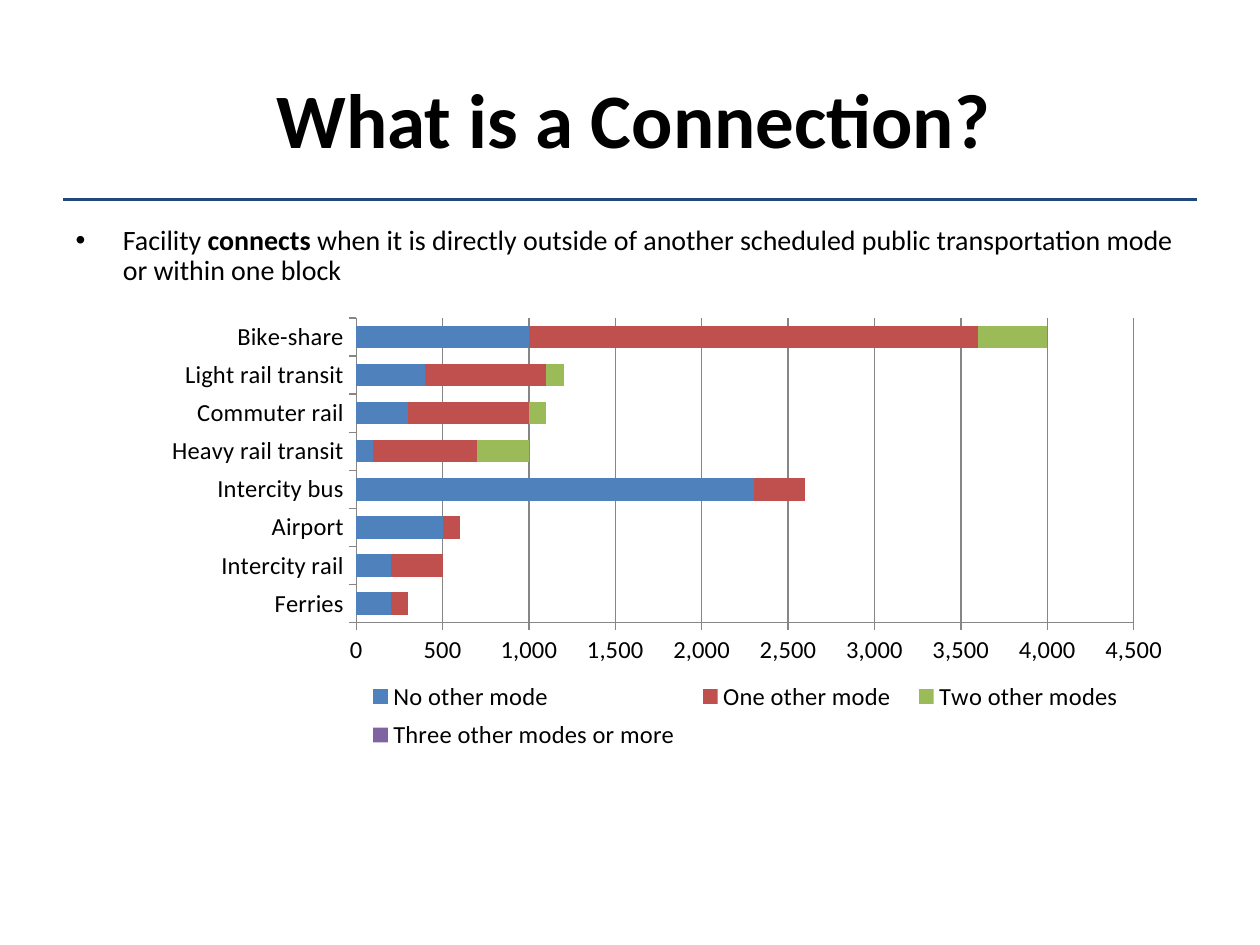
import dataclasses

import pptx
import pptx.chart.data
import pptx.dml.color
import pptx.enum.chart
import pptx.enum.shapes
import pptx.enum.text
import pptx.oxml
import pptx.oxml.ns
import pptx.util

W, H = 10, 7.5
FONT = "Calibri"
GRAY = "868686"
CHART_NS = "http://schemas.openxmlformats.org/drawingml/2006/chart"


@dataclasses.dataclass
class Box:
    x: float
    y: float
    w: float
    h: float

    def emu(self) -> list:
        return [pptx.util.Inches(share * side) for share, side in
                ((self.x, W), (self.y, H), (self.w, W), (self.h, H))]


@dataclasses.dataclass
class Series:
    name: str
    color: str
    values: tuple


TITLE_BOX = Box(0.053, 0.041, 0.9, 0.167)
BODY_BOX = Box(0.05, 0.233, 0.9, 0.66)
CHART_BOX = Box(0.083, 0.311, 0.85, 0.5)
PLOT_BOX = Box(0.235, 0.051, 0.726, 0.645)
LEGEND_BOX = Box(0.232, 0.803, 0.733, 0.18)

CATEGORIES = ("Ferries", "Intercity rail", "Airport", "Intercity bus",
              "Heavy rail transit", "Commuter rail", "Light rail transit", "Bike-share")
SERIES = (
    Series("No other mode", "4F81BD", (200, 200, 500, 2300, 100, 300, 400, 1000)),
    Series("One other mode", "C0504D", (100, 300, 100, 300, 600, 700, 700, 2600)),
    Series("Two other modes", "9BBB59", (0, 0, 0, 0, 300, 100, 100, 400)),
    Series("Three other modes or more", "8064A2", (0,) * len(CATEGORIES)),
)


def rgb(value: str) -> pptx.dml.color.RGBColor:
    return pptx.dml.color.RGBColor.from_string(value)


def set_attrs(obj, values: dict) -> None:
    for name, value in values.items():
        setattr(obj, name, value)


def set_font(font, size: float, bold: bool = False) -> None:
    set_attrs(font, {"name": FONT, "size": pptx.util.Pt(size), "bold": bold})
    font.color.rgb = rgb("000000")


def place(sp, box: Box) -> None:
    set_attrs(sp, dict(zip(("left", "top", "width", "height"), box.emu())))


def fill_text(sp, box: Box, runs: tuple, size: float, frame: dict, para: dict):
    place(sp, box)
    tf = sp.text_frame
    set_attrs(tf, {"word_wrap": True, "auto_size": pptx.enum.text.MSO_AUTO_SIZE.NONE, **frame})
    p = tf.paragraphs[0]
    set_attrs(p, para)
    for text, bold in runs:
        r = p.add_run()
        r.text = text
        set_font(r.font, size, bold)
    return p


def add_rule(slide) -> None:
    x1, x2, y = (pptx.util.Inches(v) for v in (0.05 * W, 0.95 * W, 0.211 * H))
    line = slide.shapes.add_connector(pptx.enum.shapes.MSO_CONNECTOR.STRAIGHT, x1, y, x2, y)
    line.line.color.rgb = rgb("1F497D")
    line.line.width = pptx.util.Pt(2)
    line._element.spPr.append(
        pptx.oxml.parse_xml(f'<a:effectLst {pptx.oxml.ns.nsdecls("a")}/>'))


def set_layout(parent, index: int, box: Box, inner: bool = False) -> None:
    for old in parent.findall(f"{{{CHART_NS}}}layout"):
        parent.remove(old)
    tags = [("layoutTarget", "inner")] if inner else []
    tags += [("xMode", "edge"), ("yMode", "edge")]
    tags += list(dataclasses.asdict(box).items())
    body = "".join(f'<c:{tag} val="{value}"/>' for tag, value in tags)
    parent.insert(index, pptx.oxml.parse_xml(
        f'<c:layout xmlns:c="{CHART_NS}"><c:manualLayout>{body}</c:manualLayout></c:layout>'))


def format_axis(axis, gridlines: bool) -> None:
    set_attrs(axis, {
        "has_major_gridlines": gridlines,
        "major_tick_mark": pptx.enum.chart.XL_TICK_MARK.OUTSIDE,
        "minor_tick_mark": pptx.enum.chart.XL_TICK_MARK.NONE,
    })
    set_font(axis.tick_labels.font, 14)
    lines = [axis.format.line]
    if gridlines:
        lines.append(axis.major_gridlines.format.line)
    for line in lines:
        line.color.rgb = rgb(GRAY)
        line.width = pptx.util.Pt(0.75)


def add_mode_chart(slide) -> None:
    data = pptx.chart.data.CategoryChartData()
    data.categories = CATEGORIES
    for series in SERIES:
        data.add_series(series.name, series.values)
    chart = slide.shapes.add_chart(
        pptx.enum.chart.XL_CHART_TYPE.BAR_STACKED, *CHART_BOX.emu(), data).chart
    set_attrs(chart, {"has_title": False, "has_legend": True})
    set_font(chart.font, 10)
    plot = chart.plots[0]
    set_attrs(plot, {"gap_width": 70, "overlap": 100, "vary_by_categories": False})
    for drawn, series in zip(plot.series, SERIES):
        drawn.format.fill.solid()
        drawn.format.fill.fore_color.rgb = rgb(series.color)
    format_axis(chart.category_axis, False)
    format_axis(chart.value_axis, True)
    set_attrs(chart.value_axis, {"minimum_scale": 0, "maximum_scale": 4500, "major_unit": 500})
    set_attrs(chart.value_axis.tick_labels,
              {"number_format": "#,##0", "number_format_is_linked": False})
    set_attrs(chart.legend, {"position": pptx.enum.chart.XL_LEGEND_POSITION.BOTTOM,
                             "include_in_layout": False})
    set_font(chart.legend.font, 14)
    set_layout(plot._element.getparent(), 0, PLOT_BOX, inner=True)
    set_layout(chart.legend._element, 1, LEGEND_BOX)


def main() -> None:
    prs = pptx.Presentation()
    set_attrs(prs, {"slide_width": pptx.util.Inches(W), "slide_height": pptx.util.Inches(H)})
    slide = prs.slides.add_slide(prs.slide_layouts[1])
    add_rule(slide)
    fill_text(slide.shapes.title, TITLE_BOX, (("What is a Connection?", True),), 44,
              {"vertical_anchor": pptx.enum.text.MSO_ANCHOR.MIDDLE},
              {"alignment": pptx.enum.text.PP_ALIGN.CENTER})
    p = fill_text(slide.placeholders[1], BODY_BOX, (
        ("Facility ", False), ("connects ", True),
        ("when it is directly outside of another scheduled public transportation mode "
         "or within one block", False),
    ), 16, {}, {"line_spacing": 0.9, "space_before": pptx.util.Pt(0)})
    pPr = p._p.get_or_add_pPr()
    indent = pptx.util.Inches(0.375)
    pPr.set("marL", str(indent))
    pPr.set("indent", str(-indent))
    add_mode_chart(slide)
    prs.save("out.pptx")


if __name__ == "__main__":
    main()
